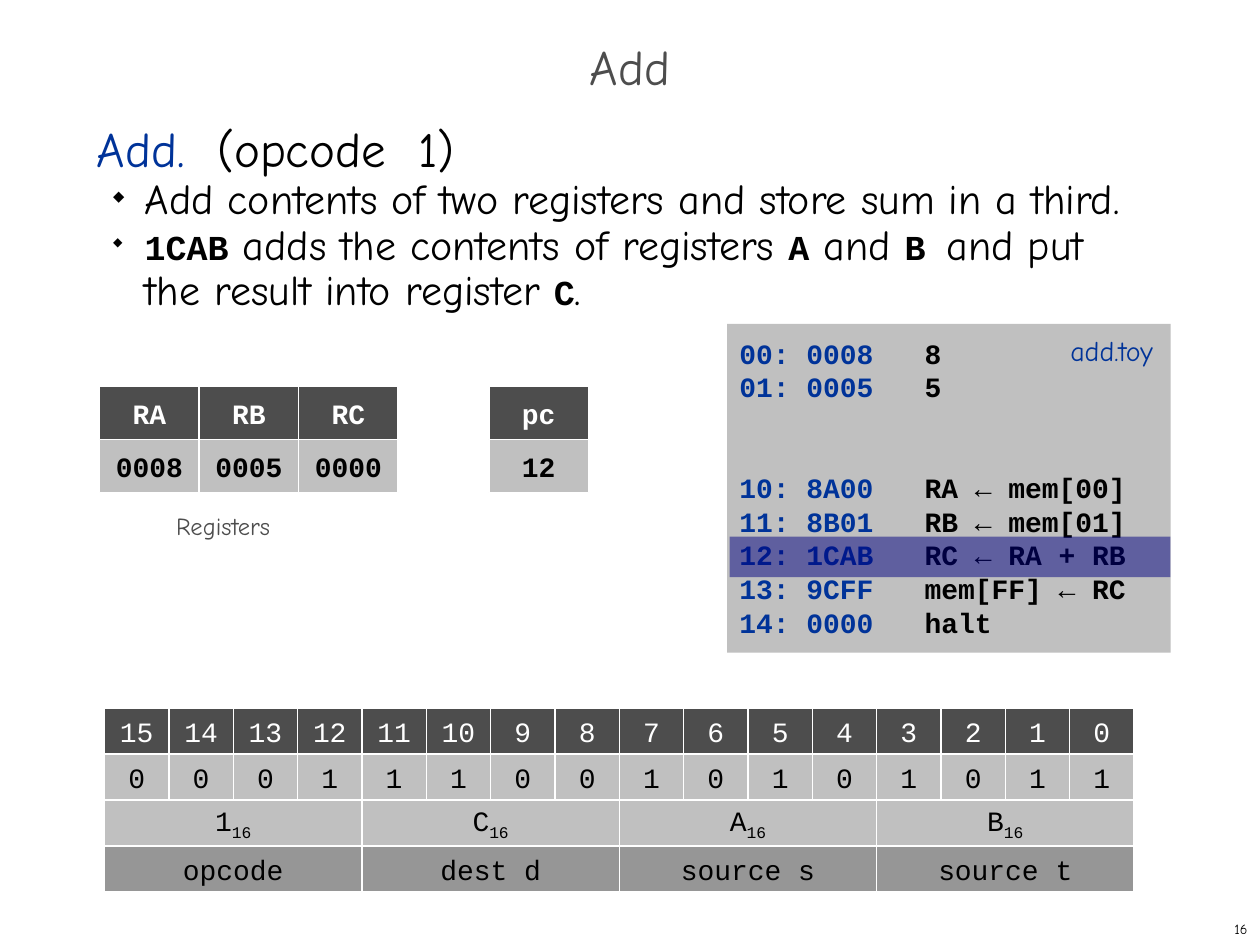
import pptx
import pptx.dml.color
import pptx.enum.shapes
import pptx.enum.text
import pptx.oxml.ns
import pptx.util
from lxml import etree

RGBColor = pptx.dml.color.RGBColor
ALIGN = pptx.enum.text.PP_ALIGN
ANCHOR = pptx.enum.text.MSO_ANCHOR
Inches, Pt = pptx.util.Inches, pptx.util.Pt

BLACK = RGBColor(0x00, 0x00, 0x00)
WHITE = RGBColor(0xFF, 0xFF, 0xFF)
BLUE = RGBColor(0x00, 0x33, 0x99)
NAVY = RGBColor(0x00, 0x00, 0x80)
DARK = RGBColor(0x4D, 0x4D, 0x4D)
MIDDLE = RGBColor(0x96, 0x96, 0x96)
LIGHT = RGBColor(0xC0, 0xC0, 0xC0)

HAND, MONO = "Comic Neue", "Courier New"
WIDTH, HEIGHT = 10, 7.5

# A run is a text and the format that differs from its text box.
CODE_WORD = dict(size=20, font=MONO, bold=True)
HEADING = [("Add.  ", dict(color=BLUE, size=28)), ("(opcode  1)", dict(size=28))]
BULLETS = [
    [("Add contents of two registers and store sum in a third.", {})],
    [("1CAB", CODE_WORD), (" adds the contents of registers ", {}),
     ("A", CODE_WORD), (" and ", {}), ("B ", CODE_WORD),
     ("and put the result into register ", {}), ("C", CODE_WORD), (".", {})],
]
DATA = [("00: 0008", "8"), ("01: 0005", "5")]
PROGRAM = [
    ("10: 8A00", "RA ← mem[00]"),
    ("11: 8B01", "RB ← mem[01]"),
    ("12: 1CAB", "RC ← RA + RB"),
    ("13: 9CFF", "mem[FF] ← RC"),
    ("14: 0000", "halt"),
]
REGISTERS = [("RA", "0008"), ("RB", "0005"), ("RC", "0000")]
COUNTER = [("pc", "12")]
BITS = "0001110010101011"
FIELDS = [("1", "opcode"), ("C", "dest d"), ("A", "source s"), ("B", "source t")]

GRID_LEFT, GRID_TOP, GRID_WIDTH, GRID_ROW = 0.83, 5.62, 8.17, 0.365
REGISTER_TOP, REGISTER_WIDTH, REGISTER_ROW = 3.07, 0.79, 0.42
CODE_LINE, CODE_TAB = 19.2, 1.47


def add_child(parent, tag, **attributes):
    child = etree.SubElement(parent, pptx.oxml.ns.qn(tag))
    for name, value in attributes.items():
        child.set(name, str(value))
    return child


def write(shape, paragraphs, size=16, font=HAND, color=BLACK, bold=False,
          align=ALIGN.LEFT, anchor=ANCHOR.TOP, margins=(0.1, 0.05), wrap=True,
          spacing=None):
    """Fill a shape with paragraphs: plain strings or lists of (text, format) runs."""
    frame = shape.text_frame
    frame.word_wrap = wrap
    frame.vertical_anchor = anchor
    frame.margin_left = frame.margin_right = Inches(margins[0])
    frame.margin_top = frame.margin_bottom = Inches(margins[1])
    for index, runs in enumerate(paragraphs):
        paragraph = frame.add_paragraph() if index else frame.paragraphs[0]
        paragraph.alignment = align
        if spacing:
            paragraph.line_spacing = spacing
        for text, style in [(runs, {})] if isinstance(runs, str) else runs:
            run = paragraph.add_run()
            run.text = text
            run.font.name = style.get("font", font)
            run.font.size = Pt(style.get("size", size))
            run.font.bold = style.get("bold", bold)
            run.font.color.rgb = style.get("color", color)
            if "baseline" in style:
                run._r.get_or_add_rPr().set("baseline", str(style["baseline"]))
    return frame


def add_text(slide, box, paragraphs, **style):
    return write(slide.shapes.add_textbox(*map(Inches, box)), paragraphs, **style)


def add_rectangle(slide, box, fill, line=None):
    shape = slide.shapes.add_shape(
        pptx.enum.shapes.MSO_SHAPE.RECTANGLE, *map(Inches, box))
    shape.shadow.inherit = False
    shape.fill.solid()
    shape.fill.fore_color.rgb = fill
    if line is None:
        shape.line.fill.background()
    else:
        shape.line.color.rgb = line
        shape.line.width = Pt(0.75)
    return shape


def add_cells(slide, left, top, width, height, texts, fill, color=BLACK, bold=False):
    """Draw one row of equal cells."""
    for column, text in enumerate(texts):
        cell = add_rectangle(
            slide, (left + column * width, top, width, height), fill, WHITE)
        write(cell, [text], font=MONO, color=color, bold=bold, wrap=False,
              align=ALIGN.CENTER, anchor=ANCHOR.MIDDLE)


def add_description(slide):
    frame = add_text(slide, (0.67, 1, 8.58, 5.92), [HEADING, *BULLETS],
                     size=24, spacing=Pt(26))
    for paragraph in frame.paragraphs[1:]:
        paragraph.level = 1
        properties = paragraph._p.get_or_add_pPr()
        properties.set("marL", str(Inches(0.38)))
        properties.set("indent", str(Inches(-0.25)))
        bullet_color = add_child(properties, "a:buClr")
        add_child(bullet_color, "a:srgbClr", val=BLACK)
        add_child(properties, "a:buSzPct", val=35000)
        add_child(properties, "a:buChar", char="◆")


def add_program(slide):
    panel = add_rectangle(slide, (5.77, 2.57, 3.52, 2.61), LIGHT)
    lines = [[(code, dict(color=BLUE)), ("\t" + meaning, {})]
             for code, meaning in DATA + PROGRAM]
    frame = write(panel, lines, font=MONO, bold=True, margins=(0.1, 0.1),
                  spacing=Pt(CODE_LINE))
    frame.paragraphs[len(DATA)].space_before = Pt(2 * CODE_LINE)
    for paragraph in frame.paragraphs:
        tabs = add_child(paragraph._p.get_or_add_pPr(), "a:tabLst")
        add_child(tabs, "a:tab", pos=Inches(CODE_TAB), algn="l")
    add_text(slide, (7.77, 2.65, 1.38, 0.27), ["add.toy"], color=BLUE,
             align=ALIGN.RIGHT, margins=(0, 0))
    highlight = add_rectangle(slide, (5.79, 4.26, 3.5, 0.32), NAVY)
    color = highlight.fill._xPr.find(".//" + pptx.oxml.ns.qn("a:srgbClr"))
    add_child(color, "a:alpha", val=50000)


def add_registers(slide):
    for left, registers in ((0.79, REGISTERS), (3.88, COUNTER)):
        names, values = zip(*registers)
        add_cells(slide, left, REGISTER_TOP + REGISTER_ROW, REGISTER_WIDTH,
                  REGISTER_ROW, values, LIGHT, bold=True)
        add_cells(slide, left, REGISTER_TOP, REGISTER_WIDTH,
                  REGISTER_ROW, names, DARK, WHITE, bold=True)
    add_text(slide, (1.3, 4.01, 1.53, 0.33), ["Registers"], size=14, color=DARK)


def add_instruction_format(slide):
    digits = [[(digit, {}), ("16", dict(baseline=-25000))] for digit, _ in FIELDS]
    rows = [
        (range_texts(len(BITS)), DARK, WHITE),
        (BITS, LIGHT, BLACK),
        (digits, LIGHT, BLACK),
        ([name for _, name in FIELDS], MIDDLE, BLACK),
    ]
    for row, (texts, fill, color) in enumerate(rows):
        add_cells(slide, GRID_LEFT, GRID_TOP + row * GRID_ROW,
                  GRID_WIDTH / len(texts), GRID_ROW, texts, fill, color)


def range_texts(count):
    """Bit numbers from the highest down to 0."""
    return [str(number) for number in reversed(range(count))]


def main():
    presentation = pptx.Presentation()
    presentation.slide_width, presentation.slide_height = Inches(WIDTH), Inches(HEIGHT)
    slide = presentation.slides.add_slide(presentation.slide_layouts[6])
    add_text(slide, (0, 0.33, WIDTH, 0.5), ["Add"], size=28, color=DARK,
             align=ALIGN.CENTER, anchor=ANCHOR.MIDDLE, spacing=0.7)
    add_description(slide)
    add_program(slide)
    add_registers(slide)
    add_instruction_format(slide)
    add_text(slide, (7.92, 7.25, 2.08, 0.25), ["16"], size=8,
             align=ALIGN.RIGHT, anchor=ANCHOR.MIDDLE)
    presentation.save("out.pptx")


if __name__ == "__main__":
    main()
